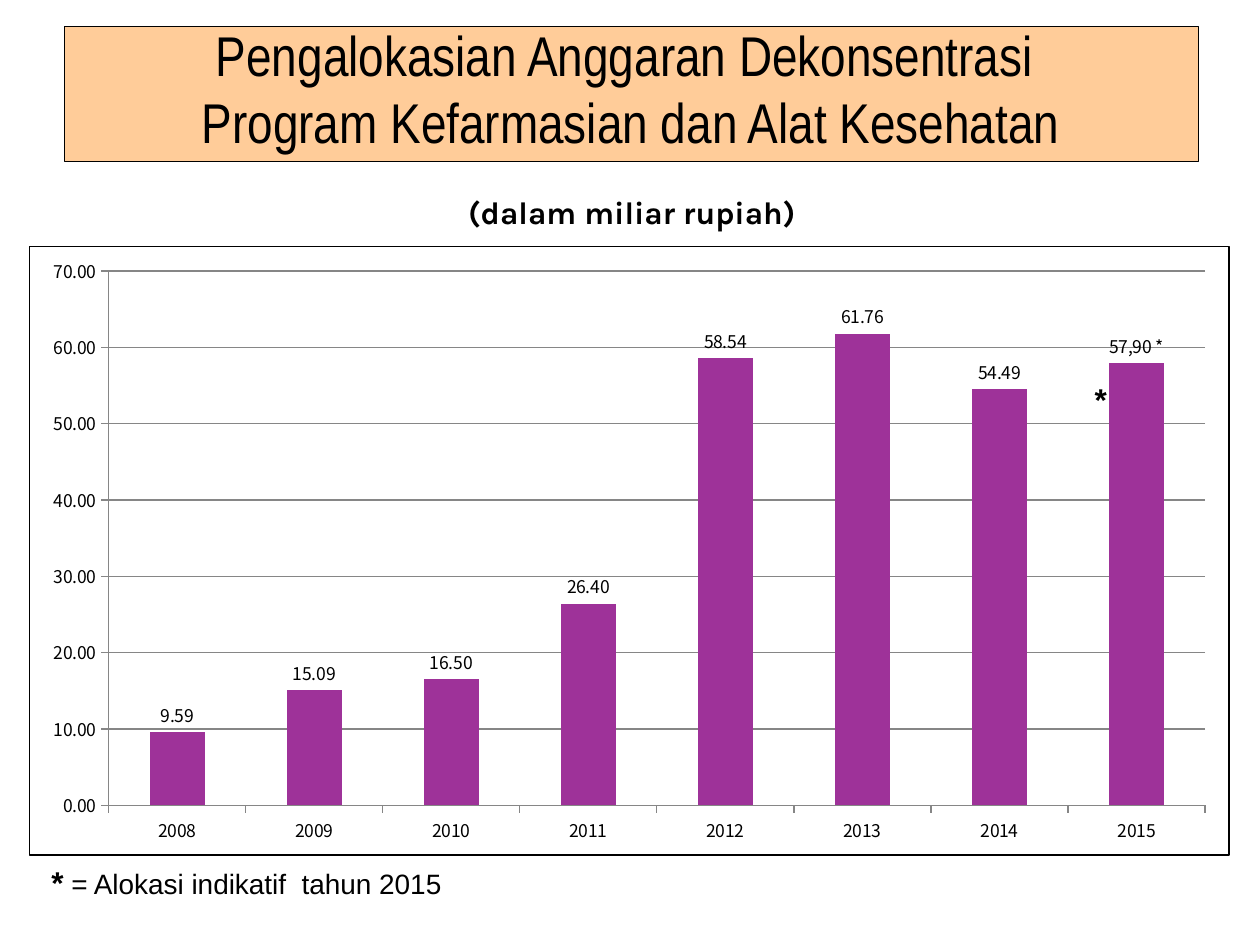
from dataclasses import dataclass

from lxml import etree
from pptx import Presentation
from pptx.chart.data import CategoryChartData
from pptx.dml.color import RGBColor
from pptx.enum.chart import XL_CHART_TYPE, XL_LABEL_POSITION, XL_TICK_MARK
from pptx.enum.text import MSO_ANCHOR, MSO_AUTO_SIZE, PP_ALIGN
from pptx.oxml import parse_xml
from pptx.util import Inches, Pt

COLUMNS = XL_CHART_TYPE.COLUMN_CLUSTERED
OUTSIDE_END = XL_LABEL_POSITION.OUTSIDE_END
TICK_OUT = XL_TICK_MARK.OUTSIDE
BOTTOM = MSO_ANCHOR.BOTTOM
NO_FIT = MSO_AUTO_SIZE.NONE
CENTER = PP_ALIGN.CENTER
TITLE_ONLY = 5


@dataclass(frozen=True)
class Theme:
    ink: str = "000000"
    banner: str = "FFCC99"
    column: str = "9E3299"
    grid: str = "868686"
    title_font: str = "Arial Narrow"
    unit_font: str = "Karla"
    body_font: str = "Arial"
    chart_font: str = "Noto Sans CJK KR"
    title_size: int = 32
    strong_size: int = 18
    note_size: int = 16
    chart_size: int = 10
    border: float = 0.75


THEME = Theme()
BUDGET = {
    "2008": 9.59, "2009": 15.09, "2010": 16.50, "2011": 26.40,
    "2012": 58.54, "2013": 61.76, "2014": 54.49, "2015": 57.90,
}
INDICATIVE_LABEL = "57,90 *"


def set_font(font, name, size, bold=False):
    values = {"name": name, "size": Pt(size), "bold": bold}
    for key, value in values.items():
        setattr(font, key, value)
    font.color.rgb = RGBColor.from_string(THEME.ink)


def set_line(line, color, width=THEME.border):
    line.color.rgb = RGBColor.from_string(color)
    line.width = Pt(width)


def add_title(page, text, left, top, width, height):
    box = page.shapes.title
    place = {"left": left, "top": top, "width": width, "height": height}
    for key, value in place.items():
        setattr(box, key, Inches(value))
    box.fill.solid()
    box.fill.fore_color.rgb = RGBColor.from_string(THEME.banner)
    set_line(box.line, THEME.ink)
    frame = box.text_frame
    frame.text = text
    frame.auto_size = NO_FIT
    frame.vertical_anchor = BOTTOM
    para = frame.paragraphs[0]
    para.alignment = CENTER
    para.line_spacing = 1.0
    for span in para.runs:
        set_font(span.font, THEME.title_font, THEME.title_size)


def add_text(page, spans, left, top, width, height, align=None):
    box = page.shapes.add_textbox(*map(Inches, (left, top, width, height)))
    frame = box.text_frame
    frame.word_wrap = True
    para = frame.paragraphs[0]
    para.alignment = align
    for text, name, size, bold in spans:
        span = para.add_run()
        span.text = text
        set_font(span.font, name, size, bold)


def add_chart_border(chart):
    border = parse_xml(
        '<c:spPr xmlns:c="http://schemas.openxmlformats.org/drawingml/2006/chart" '
        'xmlns:a="http://schemas.openxmlformats.org/drawingml/2006/main">'
        f'<a:noFill/><a:ln w="{Pt(THEME.border)}"><a:solidFill>'
        f'<a:srgbClr val="{THEME.ink}"/></a:solidFill></a:ln></c:spPr>'
    )
    tag = etree.QName(border).namespace
    chart.element.find(f"{{{tag}}}chart").addnext(border)


def format_axes(chart):
    for axis in (chart.category_axis, chart.value_axis):
        axis.major_tick_mark = TICK_OUT
        set_line(axis.format.line, THEME.grid)
    scale = chart.value_axis
    values = {"minimum_scale": 0, "maximum_scale": 70, "major_unit": 10}
    for key, value in values.items():
        setattr(scale, key, value)
    scale.tick_labels.number_format = "#,##0.00"
    scale.tick_labels.number_format_is_linked = False
    set_line(scale.major_gridlines.format.line, THEME.grid)


def format_columns(plot):
    plot.gap_width = 150
    plot.vary_by_categories = False
    series = plot.series[0]
    series.format.fill.solid()
    series.format.fill.fore_color.rgb = RGBColor.from_string(THEME.column)
    labels = series.data_labels
    values = {
        "show_value": True,
        "number_format": "#,##0.00",
        "number_format_is_linked": False,
        "position": OUTSIDE_END,
    }
    for key, value in values.items():
        setattr(labels, key, value)
    set_font(labels.font, THEME.chart_font, THEME.chart_size)
    label = series.points[len(BUDGET) - 1].data_label
    label.position = OUTSIDE_END
    span = label.text_frame.paragraphs[0].add_run()
    span.text = INDICATIVE_LABEL
    set_font(span.font, THEME.chart_font, THEME.chart_size)


def add_budget_chart(page, left, top, width, height):
    data = CategoryChartData(number_format="#,##0.00")
    data.categories = list(BUDGET)
    data.add_series("Series 1", list(BUDGET.values()))
    place = map(Inches, (left, top, width, height))
    chart = page.shapes.add_chart(COLUMNS, *place, data).chart
    chart.has_title = False
    chart.has_legend = False
    set_font(chart.font, THEME.chart_font, THEME.chart_size)
    format_axes(chart)
    format_columns(chart.plots[0])
    add_chart_border(chart)


def main():
    deck = Presentation()
    deck.slide_width, deck.slide_height = Inches(10), Inches(7.5)
    page = deck.slides.add_slide(deck.slide_layouts[TITLE_ONLY])
    star = ("*", THEME.body_font, THEME.strong_size, True)
    unit = ("(dalam miliar rupiah)", THEME.unit_font, THEME.strong_size, True)
    note = (" = Alokasi indikatif  tahun 2015", THEME.body_font, THEME.note_size, False)
    add_title(
        page,
        "Pengalokasian Anggaran Dekonsentrasi \vProgram Kefarmasian dan Alat Kesehatan",
        0.51, 0.21, 9, 1.07,
    )
    add_text(page, [unit], 2.89, 1.48, 4.25, 0.39, CENTER)
    add_text(page, [star], 8.59, 2.97, 0.47, 0.5)
    add_text(page, [star, note], 0.31, 6.8, 4.8, 0.4)
    add_budget_chart(page, 0.23, 1.95, 9.53, 4.84)
    deck.save("out.pptx")


if __name__ == "__main__":
    main()
